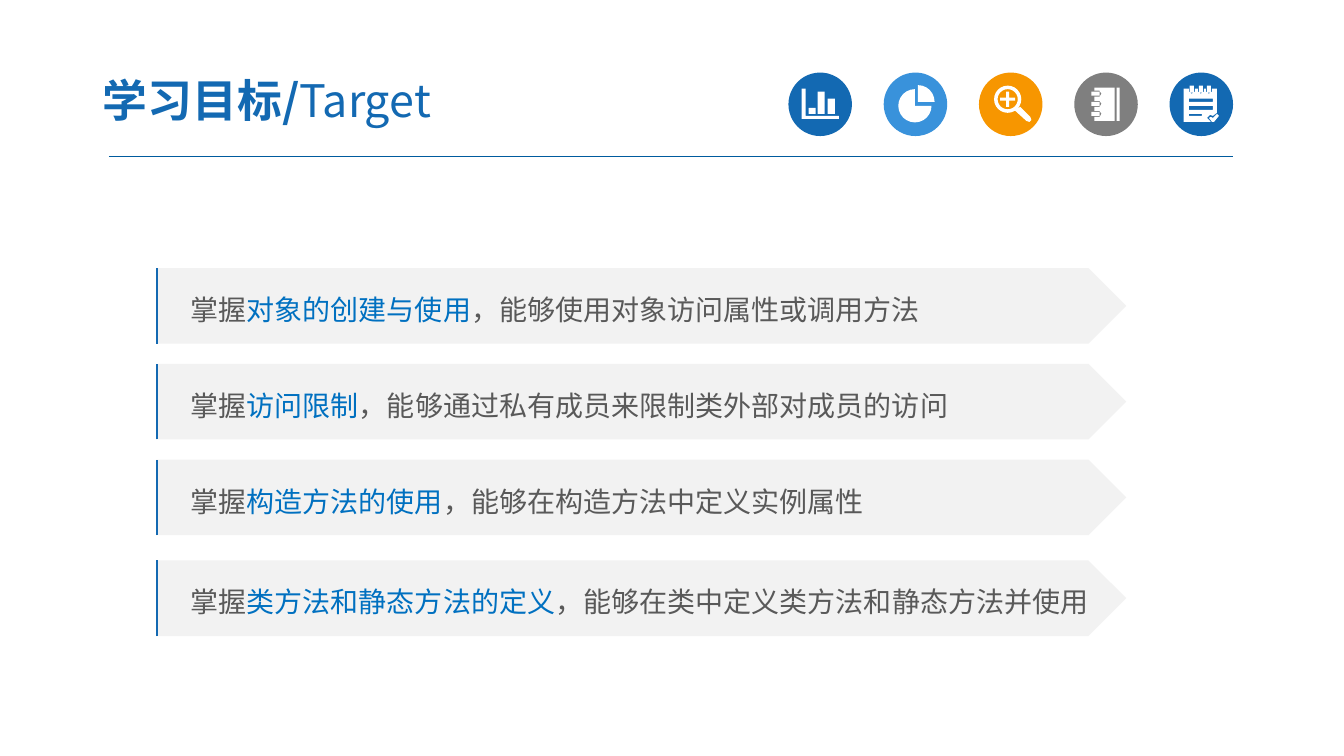
from math import cos, radians, sin

from lxml import etree
from pptx import Presentation
from pptx.dml.color import RGBColor
from pptx.enum import shapes, text
from pptx.oxml import ns
from pptx.util import Inches, Pt

FONT = "Noto Sans CJK SC"
BLUE, WHITE, GREY = "1369B2", "FFFFFF", "595959"
HIGHLIGHT, PANEL, RULE = "0070C0", "F2F2F2", "005B9E"

TITLE = [("学习目标/", True), ("Target", False)]
# Top of the bar, highlighted topic, rest of the sentence
GOALS = [
    (2.66, "对象的创建与使用", "，能够使用对象访问属性或调用方法"),
    (3.61, "访问限制", "，能够通过私有成员来限制类外部对成员的访问"),
    (4.56, "构造方法的使用", "，能够在构造方法中定义实例属性"),
    (5.56, "类方法和静态方法的定义", "，能够在类中定义类方法和静态方法并使用"),
]
BAR_LEFT, BAR_WIDTH, BAR_HEIGHT = 1.55, 9.62, 0.75
DISC_LEFT, DISC_TOP, DISC_SIZE, DISC_STEP = 7.82, 0.72, 0.63, 0.945


def box(left, top, right, bottom):
    return [(left, top), (right, top), (right, bottom), (left, bottom)]


def arc(x, y, radius, start=0, end=360, step=15):
    """Points on a circle, clockwise from the right, angles in degrees."""
    return [(x + radius * cos(radians(angle)), y + radius * sin(radians(angle)))
            for angle in range(start, end + 1, step)]


# Each icon is a list of contours in inches from the corner of its disc;
# a contour inside another one is a hole.
BAR_CHART = [
    [(0.13, 0.16), (0.17, 0.16), (0.17, 0.43), (0.5, 0.43), (0.5, 0.46), (0.13, 0.46)],
    box(0.2, 0.35, 0.27, 0.41),
    box(0.29, 0.19, 0.36, 0.41),
    box(0.39, 0.26, 0.46, 0.41),
]
PIE_CHART = [
    [(0.31, 0.33)] + arc(0.31, 0.33, 0.165, 0, 270),
    [(0.34, 0.29)] + arc(0.34, 0.29, 0.165, 270, 360),
]
MAGNIFIER = [
    arc(0.285, 0.265, 0.135),
    arc(0.285, 0.265, 0.1),
    [(0.27, 0.19), (0.3, 0.19), (0.3, 0.25), (0.36, 0.25), (0.36, 0.28), (0.3, 0.28),
     (0.3, 0.34), (0.27, 0.34), (0.27, 0.28), (0.21, 0.28), (0.21, 0.25), (0.27, 0.25)],
    [(0.38, 0.36), (0.41, 0.34), (0.51, 0.44), (0.52, 0.47), (0.5, 0.49),
     (0.47, 0.48), (0.36, 0.38)],
]
NOTEBOOK_RINGS = (0.41, 0.31, 0.21)
NOTEBOOK = [
    [(0.2, 0.15), (0.4, 0.15), (0.4, 0.48), (0.2, 0.48)]
    + [(x, ring + dy) for ring in NOTEBOOK_RINGS
       for x, dy in ((0.2, 0.03), (0.25, 0.03), (0.27, 0), (0.25, -0.03), (0.2, -0.03))],
    box(0.42, 0.15, 0.45, 0.48),
] + [box(0.17, ring - 0.02, 0.25, ring + 0.02) for ring in NOTEBOOK_RINGS]
CHECKLIST_RINGS = (0.22, 0.31, 0.39)
CHECKLIST = [
    [(0.14, 0.16)]
    + [(ring + dx, y) for ring in CHECKLIST_RINGS
       for dx, y in ((-0.03, 0.16), (-0.03, 0.19), (0, 0.21), (0.03, 0.19), (0.03, 0.16))]
    + [(0.47, 0.16), (0.47, 0.4), (0.43, 0.43), (0.4, 0.42), (0.37, 0.45),
       (0.41, 0.49), (0.14, 0.49)],
    box(0.19, 0.26, 0.43, 0.29),
    box(0.19, 0.33, 0.43, 0.37),
    box(0.19, 0.41, 0.32, 0.43),
    [(0.39, 0.45), (0.41, 0.44), (0.43, 0.45), (0.47, 0.41), (0.49, 0.43),
     (0.44, 0.49), (0.42, 0.49)],
] + [box(ring - 0.02, 0.13, ring + 0.02, 0.2) for ring in CHECKLIST_RINGS]
ICONS = [(BLUE, BAR_CHART), ("3992DB", PIE_CHART), ("F79600", MAGNIFIER),
         ("7F7F7F", NOTEBOOK), (BLUE, CHECKLIST)]


def rgb(color):
    return RGBColor.from_string(color)


def paint(shape, color):
    """Give a plain fill without outline or shadow."""
    shape.shadow.inherit = False
    shape.fill.solid()
    shape.fill.fore_color.rgb = rgb(color)
    shape.line.fill.background()


def add_preset(slide, preset, place, color):
    shape = slide.shapes.add_shape(preset, *map(Inches, place))
    paint(shape, color)
    return shape


def add_run(paragraph, words, size, color, bold=False):
    run = paragraph.add_run()
    run.text = words
    run.font.size, run.font.bold, run.font.name = Pt(size), bold, FONT
    run.font.color.rgb = rgb(color)
    east_asian = etree.SubElement(run._r.get_or_add_rPr(), ns.qn("a:ea"))
    east_asian.set("typeface", FONT)


def add_title(slide):
    title = slide.shapes.title
    title.left, title.top, title.width, title.height = map(
        Inches, (0.89, 0.63, 5.22, 0.72))
    frame = title.text_frame
    frame.auto_size = text.MSO_AUTO_SIZE.NONE
    frame.vertical_anchor = text.MSO_ANCHOR.MIDDLE
    frame.margin_left = frame.margin_right = Inches(0.13)
    frame.margin_top = frame.margin_bottom = Inches(0.07)
    paragraph = frame.paragraphs[0]
    paragraph.alignment = text.PP_ALIGN.LEFT
    for words, bold in TITLE:
        add_run(paragraph, words, 32, BLUE, bold)


def add_rule(slide):
    rule = slide.shapes.add_connector(shapes.MSO_CONNECTOR.STRAIGHT,
                                      *map(Inches, (1.08, 1.55, 12.23, 1.55)))
    rule.line.color.rgb = rgb(RULE)
    rule.line.width = Pt(0.75)
    etree.SubElement(rule._element.spPr, ns.qn("a:effectLst"))


def add_icon(slide, left, color, contours):
    add_preset(slide, shapes.MSO_SHAPE.OVAL,
               (left, DISC_TOP, DISC_SIZE, DISC_SIZE), color)
    builder = None
    for contour in contours:
        first, *others = [(Inches(left + x), Inches(DISC_TOP + y)) for x, y in contour]
        if builder is None:
            builder = slide.shapes.build_freeform(*first)
        else:
            builder.move_to(*first)
        builder.add_line_segments(others, close=True)
    paint(builder.convert_to_shape(), WHITE)


def add_edge(slide, top):
    """Draw the blue left edge of a bar; its frame reaches a little to the right."""
    left, bottom = Inches(BAR_LEFT + 0.01), Inches(top + BAR_HEIGHT)
    builder = slide.shapes.build_freeform(left + Inches(0.1), bottom)
    builder.move_to(left, bottom)
    builder.add_line_segments([(left, Inches(top))], close=False)
    edge = builder.convert_to_shape()
    edge.shadow.inherit = False
    edge.fill.background()
    edge.line.color.rgb = rgb(BLUE)
    edge.line.width = Pt(1.5)


def add_goal(slide, top, topic, rest):
    bar = add_preset(slide, shapes.MSO_SHAPE.PENTAGON,
                     (BAR_LEFT, top, BAR_WIDTH, BAR_HEIGHT), PANEL)
    frame = bar.text_frame
    frame.word_wrap = True
    frame.vertical_anchor = text.MSO_ANCHOR.MIDDLE
    frame.margin_left, frame.margin_right = Inches(0.34), Inches(0.05)
    paragraph = frame.paragraphs[0]
    paragraph.alignment = text.PP_ALIGN.LEFT
    paragraph.line_spacing = 1.2
    for words, color in (("掌握", GREY), (topic, HIGHLIGHT), (rest, GREY)):
        add_run(paragraph, words, 20, color)
    add_edge(slide, top)


def main():
    presentation = Presentation()
    presentation.slide_width, presentation.slide_height = Inches(13.33), Inches(7.5)
    slide = presentation.slides.add_slide(presentation.slide_layouts[5])
    add_title(slide)
    add_rule(slide)
    for index, (color, contours) in enumerate(ICONS):
        add_icon(slide, DISC_LEFT + index * DISC_STEP, color, contours)
    for goal in GOALS:
        add_goal(slide, *goal)
    presentation.save("out.pptx")


if __name__ == "__main__":
    main()
